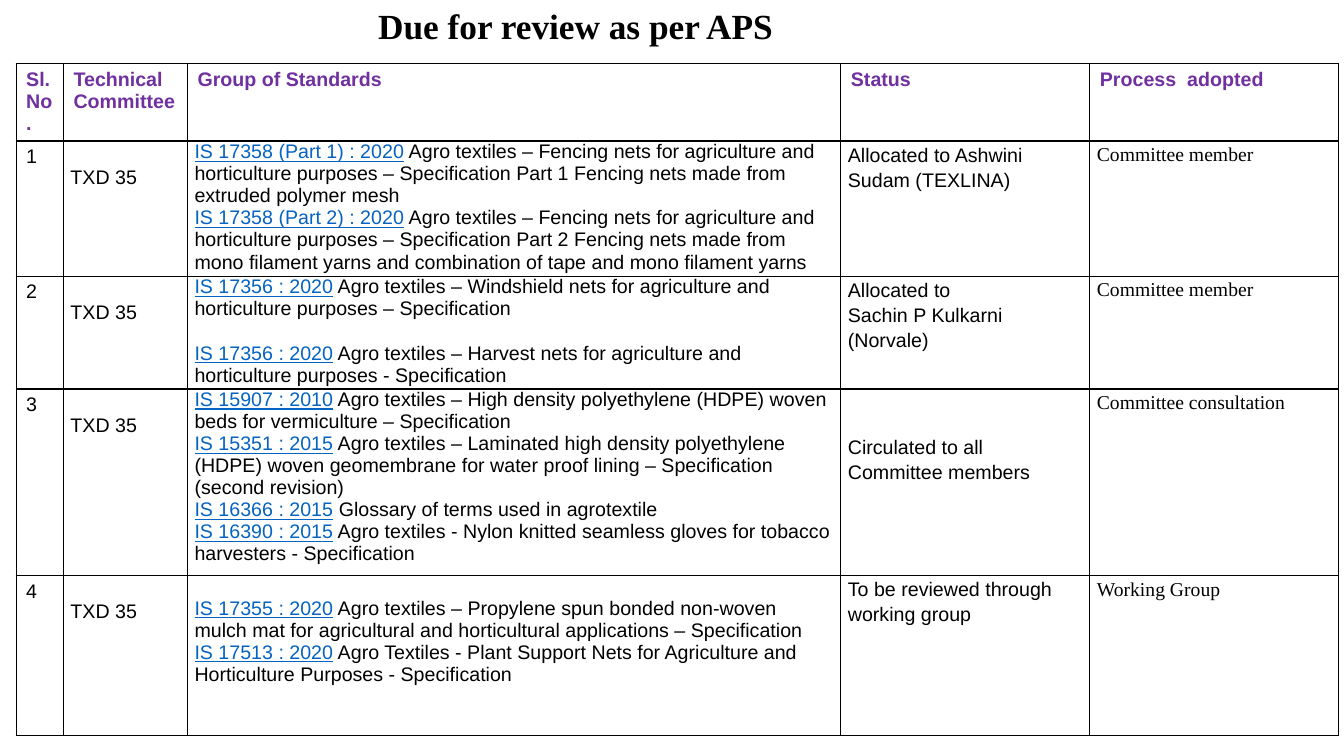
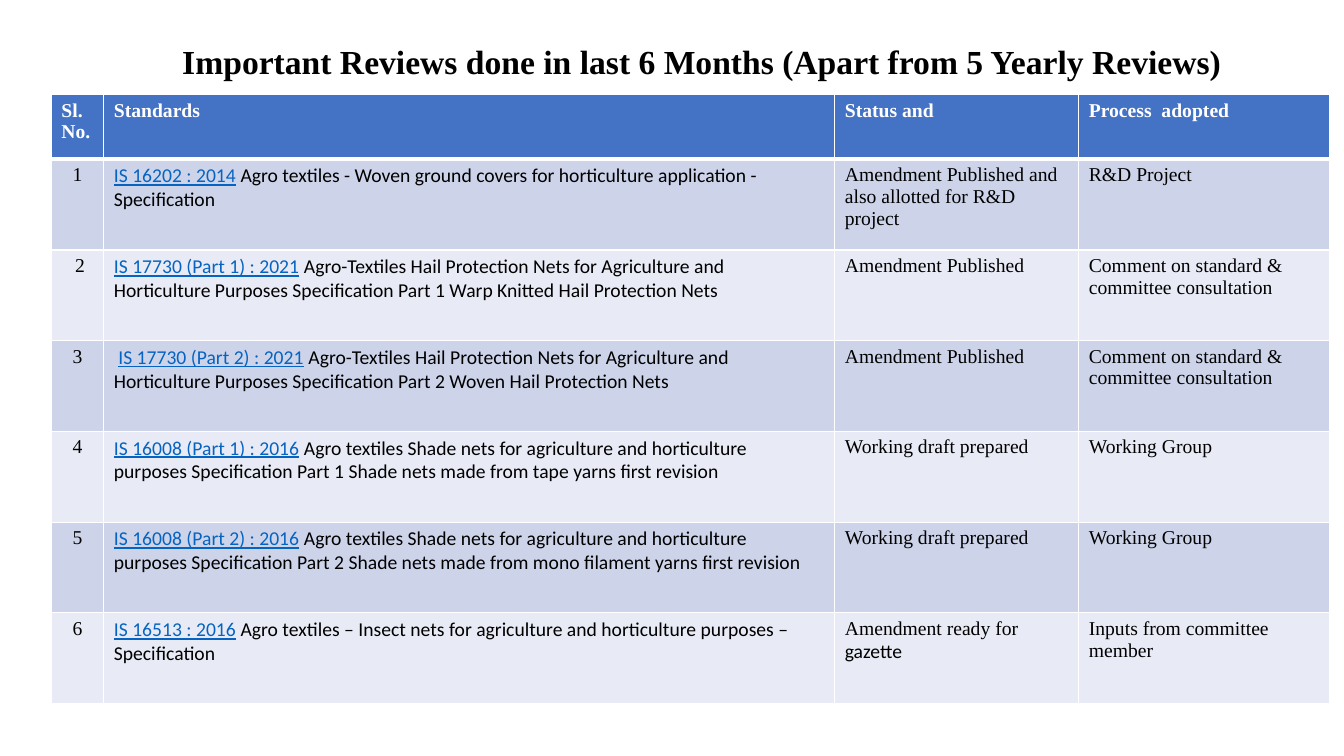
from lxml.etree import SubElement
from pptx import Presentation
from pptx.dml.color import RGBColor
from pptx.enum.text import MSO_ANCHOR, MSO_AUTO_SIZE, PP_ALIGN
from pptx.oxml.ns import qn
from pptx.util import Inches, Pt

BLACK = RGBColor(0x00, 0x00, 0x00)
WHITE = RGBColor(0xFF, 0xFF, 0xFF)
PURPLE = RGBColor(0x70, 0x30, 0xA0)
LINK = RGBColor(0x05, 0x63, 0xC1)
BLUE = RGBColor(0x44, 0x72, 0xC4)
BANDS = RGBColor(0xCD, 0xD4, 0xEA), RGBColor(0xE8, 0xEB, 0xF5)
SERIF, SANS, BODY = "Times New Roman", "Arial", "Calibri"
SIZE = Pt(14)
LINE = 0.22

DUE = {
    "title": "Due for review as per APS",
    "spot": (3.65, 0.03, 6.91, 0.49),
    "size": 25.2,
    "align": PP_ALIGN.LEFT,
    "at": (0.16, 0.63),
    "cols": (0.47, 1.23, 6.48, 2.47, 2.47),
    "rows": (0.77, 1.34, 1.12, 1.85, 1.59),
    "head": ("Sl. No.", "Technical Committee", "Group of Standards", "Status", "Process  adopted"),
}
GROUPS = [
    {"lead": 0, "gap": 0, "status": "Allocated to Ashwini Sudam (TEXLINA)", "drop": 0,
     "process": "Committee member", "items": [
         ("IS 17358 (Part 1) : 2020", " Agro textiles – Fencing nets for agriculture and horticulture purposes – Specification Part 1 Fencing nets made from extruded polymer mesh"),
         ("IS 17358 (Part 2) : 2020", " Agro textiles – Fencing nets for agriculture and horticulture purposes – Specification Part 2 Fencing nets made from mono filament yarns and combination of tape and mono filament yarns")]},
    {"lead": 0, "gap": 16, "status": "Allocated to\nSachin P Kulkarni (Norvale)", "drop": 0,
     "process": "Committee member", "items": [
         ("IS 17356 : 2020", " Agro textiles – Windshield nets for agriculture and horticulture purposes – Specification"),
         ("IS 17356 : 2020", " Agro textiles – Harvest nets for agriculture and horticulture purposes - Specification")]},
    {"lead": 0, "gap": 0, "status": "Circulated to all Committee members", "drop": 2,
     "process": "Committee consultation", "items": [
         ("IS 15907 : 2010", " Agro textiles – High density polyethylene (HDPE) woven beds for vermiculture – Specification"),
         ("IS 15351 : 2015", " Agro textiles – Laminated high density polyethylene (HDPE) woven geomembrane for water proof lining – Specification (second revision)"),
         ("IS 16366 : 2015", " Glossary of terms used in agrotextile"),
         ("IS 16390 : 2015", " Agro textiles - Nylon knitted seamless gloves for tobacco harvesters - Specification")]},
    {"lead": 1, "gap": 0, "status": "To be reviewed through working group", "drop": 0,
     "process": "Working Group", "items": [
         ("IS 17355 : 2020", " Agro textiles – Propylene spun bonded non-woven mulch mat for agricultural and horticultural applications – Specification"),
         ("IS 17513 : 2020", " Agro Textiles - Plant Support Nets for Agriculture and Horticulture Purposes - Specification")]},
]

DONE = {
    "title": "Important Reviews done in last 6 Months (Apart from 5 Yearly Reviews)",
    "spot": (0.73, 0.09, 12.46, 1.08),
    "size": 24,
    "align": PP_ALIGN.CENTER,
    "at": (0.51, 0.94),
    "cols": (0.52, 7.25, 2.42, 2.49),
    "rows": (0.64,) + (0.9,) * 6,
    "head": ("Sl. No.", "Standards", "Status and", "Process  adopted"),
}
REVIEWS = [
    ("1", "IS 16202 : 2014", " Agro textiles - Woven ground covers for horticulture application - Specification",
     "Amendment Published and also allotted for R&D project", "R&D Project"),
    (" 2", "IS 17730 (Part 1) : 2021", " Agro-Textiles Hail Protection Nets for Agriculture and Horticulture Purposes Specification Part 1 Warp Knitted Hail Protection Nets",
     "Amendment Published", "Comment on standard & committee consultation"),
    ("3", " IS 17730 (Part 2) : 2021", " Agro-Textiles Hail Protection Nets for Agriculture and Horticulture Purposes Specification Part 2 Woven Hail Protection Nets",
     "Amendment Published", "Comment on standard & committee consultation"),
    ("4", "IS 16008 (Part 1) : 2016", " Agro textiles Shade nets for agriculture and horticulture purposes Specification Part 1 Shade nets made from tape yarns first revision",
     "Working draft prepared", "Working Group"),
    ("5", "IS 16008 (Part 2) : 2016", " Agro textiles Shade nets for agriculture and horticulture purposes Specification Part 2 Shade nets made from mono filament yarns first revision",
     "Working draft prepared", "Working Group"),
    ("6", "IS 16513 : 2016", " Agro textiles – Insect nets for agriculture and horticulture purposes – Specification",
     ("Amendment ready for ", "gazette"), "Inputs from committee member"),
]


def add_run(para, text, font, color=BLACK, size=SIZE, bold=False, under=False):
    for i, part in enumerate(text.split("\n")):
        if i:
            para.add_line_break()
        run = para.add_run()
        run.text = part
        face = run.font
        face.name, face.size, face.bold, face.underline = font, size, bold, under
        face.color.rgb = color


def add_item(para, code, rest, font):
    bare = code.lstrip()
    if bare != code:
        add_run(para, " ", font)
    add_run(para, bare, font, LINK, under=True)
    add_run(para, rest, font)


def write(cell, text, font, color=BLACK, bold=False, align=PP_ALIGN.LEFT, space=1.0):
    para = cell.text_frame.paragraphs[0]
    para.alignment, para.line_spacing = align, space
    add_run(para, text, font, color, bold=bold)


def tighten(cell, lines=0):
    cell.margin_left = cell.margin_right = Inches(0.07)
    cell.margin_top, cell.margin_bottom = Inches(lines * LINE), 0


def frame(cell, color, foot=1):
    props = cell._tc.get_or_add_tcPr()
    for side, width in (("L", 1), ("R", 1), ("T", 1), ("B", foot)):
        line = SubElement(props, qn("a:ln" + side), w=str(Pt(width)))
        SubElement(SubElement(line, qn("a:solidFill")), qn("a:srgbClr"), val=str(color))


def paint(cell, color):
    cell.fill.solid()
    cell.fill.fore_color.rgb = color


def add_page(deck, page, font, ink, edge, foot):
    slide = deck.slides.add_slide(deck.slide_layouts[5])
    title = slide.shapes.title
    title.left, title.top, title.width, title.height = map(Inches, page["spot"])
    text = title.text_frame
    text.word_wrap, text.auto_size = True, MSO_AUTO_SIZE.NONE
    text.vertical_anchor = MSO_ANCHOR.MIDDLE
    para = text.paragraphs[0]
    para.alignment, para.line_spacing = page["align"], 0.9
    add_run(para, page["title"], SERIF, size=Pt(page["size"]), bold=True)

    cols, rows = page["cols"], page["rows"]
    box = map(Inches, (*page["at"], sum(cols), sum(rows)))
    table = slide.shapes.add_table(len(rows), len(cols), *box).table
    table.first_row = table.horz_banding = False
    for col, width in zip(table.columns, cols):
        col.width = Inches(width)
    for i, (row, height) in enumerate(zip(table.rows, rows)):
        row.height = Inches(height)
        for cell in row.cells:
            frame(cell, edge, 1 if i else foot)
            cell.fill.background()
    for cell, label in zip(table.rows[0].cells, page["head"]):
        write(cell, label, font, ink, bold=True)
    return table


def build_due(deck):
    table = add_page(deck, DUE, SANS, PURPLE, BLACK, 1)
    for i, group in enumerate(GROUPS, 1):
        num, team, list_, state, mode = table.rows[i].cells
        for cell, lines in ((team, 1), (list_, group["lead"]), (state, group["drop"]), (mode, 0)):
            tighten(cell, lines)
        write(num, str(i), SANS)
        write(team, "TXD 35", SANS, space=1.15)
        write(state, group["status"], SANS, space=1.15)
        write(mode, group["process"], SERIF, space=1.15)
        text = list_.text_frame
        for j, (code, rest) in enumerate(group["items"]):
            para = text.add_paragraph() if j else text.paragraphs[0]
            para.space_before = Pt(group["gap"] if j else 0)
            add_item(para, code, rest, SANS)


def build_done(deck):
    table = add_page(deck, DONE, SERIF, WHITE, WHITE, 3)
    for cell in table.rows[0].cells:
        paint(cell, BLUE)
    for i, (mark, code, rest, status, process) in enumerate(REVIEWS):
        cells = list(table.rows[i + 1].cells)
        for cell in cells:
            paint(cell, BANDS[i % 2])
        num, name, state, mode = cells
        write(num, mark, SERIF, align=PP_ALIGN.CENTER)
        add_item(name.text_frame.paragraphs[0], code, rest, BODY)
        parts = (status,) if isinstance(status, str) else status
        for part, font in zip(parts, (SERIF, BODY)):
            add_run(state.text_frame.paragraphs[0], part, font)
        write(mode, process, SERIF)


def main():
    deck = Presentation()
    deck.slide_width, deck.slide_height = Inches(13.33), Inches(7.5)
    build_due(deck)
    build_done(deck)
    deck.save("out.pptx")


if __name__ == "__main__":
    main()
